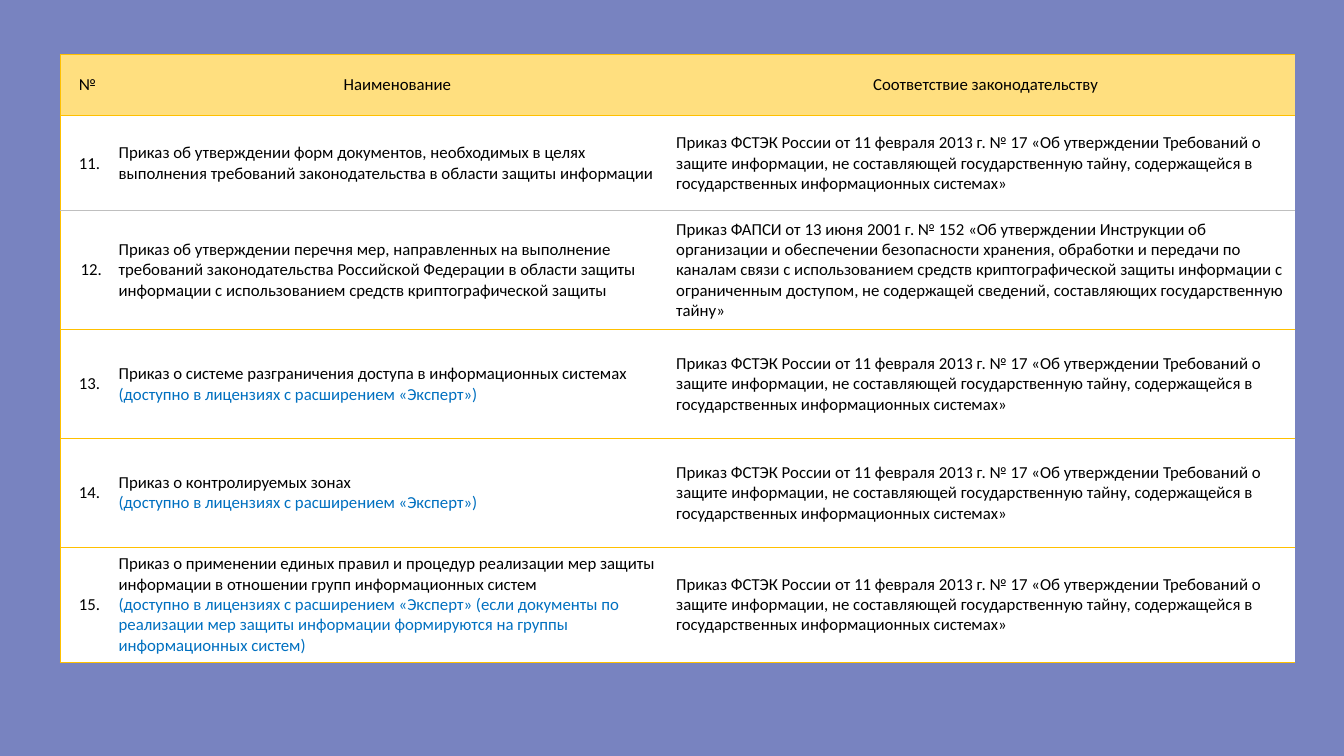
from dataclasses import dataclass

from lxml.etree import SubElement
from pptx import Presentation
from pptx.dml.color import RGBColor
from pptx.enum.text import MSO_ANCHOR, PP_ALIGN
from pptx.oxml.ns import qn
from pptx.util import Cm, Pt

# Content: number, name, optional licence note, legal basis
HEAD = ("№ ", "Наименование", "", "Соответствие законодательству")
ORDER = ("Приказ ФСТЭК России от 11 февраля 2013 г. № 17 «Об утверждении Требований о "
         "защите информации, не составляющей государственную тайну, содержащейся в "
         "государственных информационных системах»")
CRYPTO = ("Приказ ФАПСИ от 13 июня 2001 г. № 152 «Об утверждении Инструкции об "
          "организации и обеспечении безопасности хранения, обработки и передачи по "
          "каналам связи с использованием средств криптографической защиты информации с "
          "ограниченным доступом, не содержащей сведений, составляющих государственную "
          "тайну»")
EXPERT = "(доступно в лицензиях с расширением «Эксперт»)"
GROUPS = ("(доступно в лицензиях с расширением «Эксперт» (если документы по "
          "реализации мер защиты информации формируются на группы "
          "информационных систем)")
ITEMS = [
    ("11.", "Приказ об утверждении форм документов, необходимых в целях "
            "выполнения требований законодательства в области защиты информации",
     "", ORDER),
    (" 12.", "Приказ об утверждении перечня мер, направленных на выполнение "
             "требований законодательства Российской Федерации в области защиты "
             "информации с использованием средств криптографической защиты",
     "", CRYPTO),
    ("13.", "Приказ о системе разграничения доступа в информационных системах",
     EXPERT, ORDER),
    ("14.", "Приказ о контролируемых зонах", EXPERT, ORDER),
    ("15.", "Приказ о применении единых правил и процедур реализации мер защиты "
            "информации в отношении групп информационных систем",
     GROUPS, ORDER),
]
COLS = (1.47, 14.05, 15.6)
ROWS = (1.55, 2.39, 3, 2.74, 2.74, 2.9)
LEFT, TOP = 1.52, 1.37


@dataclass(frozen=True)
class Theme:
    back: str = "7883C0"
    head: str = "FFDF7F"
    body: str = "FFFFFF"
    line: str = "FFC000"
    grey: str = "BFBFBF"
    text: str = "000000"
    note: str = "0070C0"
    font: str = "Calibri"
    size: int = 12
    rule: int = 1


THEME = Theme()


def paint(fill, color):
    fill.solid()
    fill.fore_color.rgb = RGBColor.from_string(color)


def edge(cell, side, color):
    """Set one cell border; an empty color hides it."""
    line = SubElement(cell._tc.get_or_add_tcPr(), qn(f"a:ln{side}"))
    line.set("w", str(Pt(THEME.rule)))
    if color:
        fill = SubElement(line, qn("a:solidFill"))
        SubElement(fill, qn("a:srgbClr")).set("val", color)
    else:
        SubElement(line, qn("a:noFill"))


def write(cell, lines, align):
    cell.vertical_anchor = MSO_ANCHOR.MIDDLE
    cell.margin_left = cell.margin_right = cell.margin_top = cell.margin_bottom = 0
    frame = cell.text_frame
    frame.text = "\n".join(lines)
    for para, color in zip(frame.paragraphs, (THEME.text, THEME.note)):
        para.alignment = align
        font = para.font
        font.name, font.size, font.bold = THEME.font, Pt(THEME.size), False
        font.color.rgb = RGBColor.from_string(color)


def fill_table(table):
    for col, width in zip(table.columns, COLS):
        col.width = Cm(width)
    for row, height in zip(table.rows, ROWS):
        row.height = Cm(height)

    # The line between the first two items is grey, all others are gold
    rules = [THEME.line] * (len(ROWS) + 1)
    rules[2] = THEME.grey

    for r, (num, name, note, law) in enumerate([HEAD, *ITEMS]):
        cells = ([num], [name, note] if note else [name], [law])
        for c, lines in enumerate(cells):
            cell = table.cell(r, c)
            center = r == 0 or c == 0
            write(cell, lines, PP_ALIGN.CENTER if center else PP_ALIGN.LEFT)
            edge(cell, "L", "" if c else THEME.line)
            edge(cell, "R", "")
            edge(cell, "T", rules[r])
            edge(cell, "B", rules[r + 1])
            paint(cell.fill, THEME.body if r else THEME.head)


def main():
    deck = Presentation()
    deck.slide_width, deck.slide_height = Cm(33.87), Cm(19.05)
    slide = deck.slides.add_slide(deck.slide_layouts[6])
    paint(slide.background.fill, THEME.back)

    # Table of orders
    frame = slide.shapes.add_table(len(ROWS), len(COLS), Cm(LEFT), Cm(TOP),
                                   Cm(sum(COLS)), Cm(sum(ROWS)))
    table = frame.table
    table.first_row = table.horz_banding = False
    fill_table(table)
    deck.save("out.pptx")


if __name__ == "__main__":
    main()
